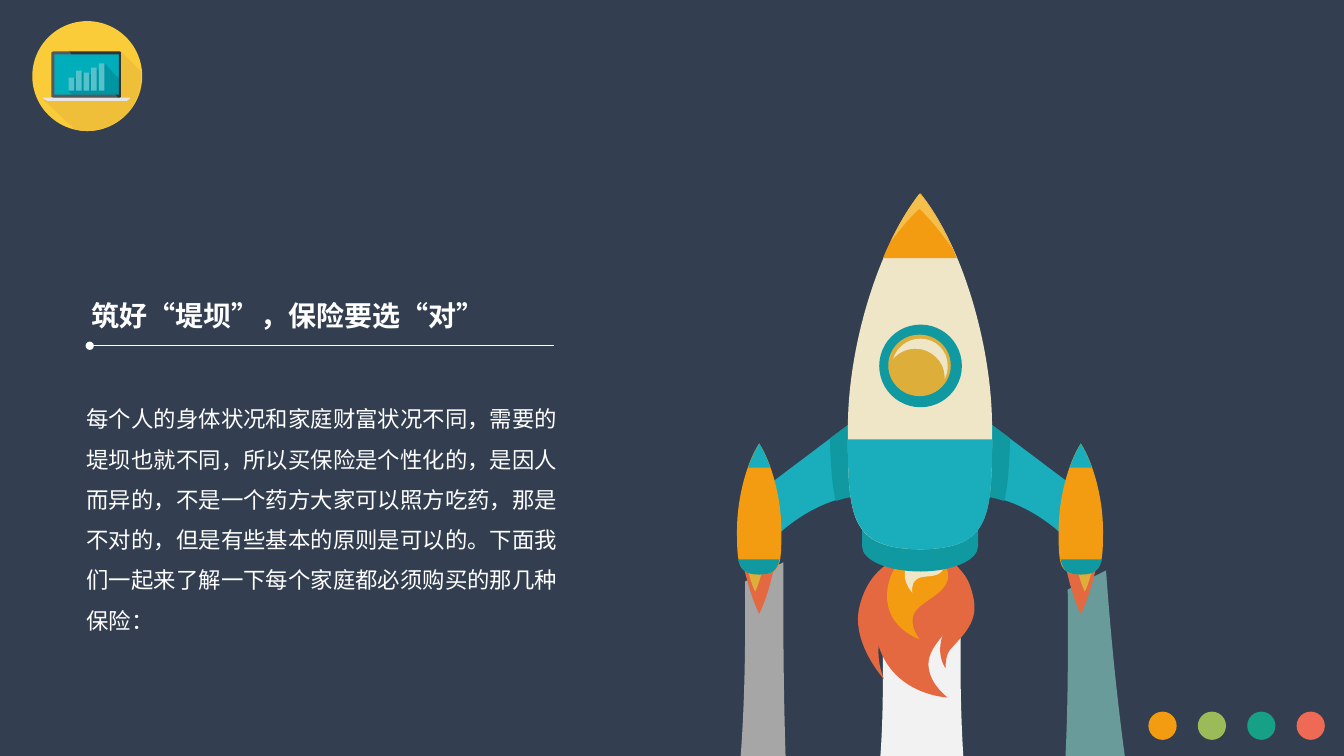
from dataclasses import dataclass

from lxml import etree
from pptx import Presentation
from pptx.dml.color import RGBColor
from pptx.enum.shapes import MSO_CONNECTOR, MSO_SHAPE
from pptx.enum.text import MSO_ANCHOR, MSO_AUTO_SIZE, PP_ALIGN
from pptx.oxml.ns import qn
from pptx.util import Inches, Pt

OVAL, RECT = MSO_SHAPE.OVAL, MSO_SHAPE.RECTANGLE
STRAIGHT = MSO_CONNECTOR.STRAIGHT
LEFT, JUSTIFY = PP_ALIGN.LEFT, PP_ALIGN.JUSTIFY
TOP, NO_FIT = MSO_ANCHOR.TOP, MSO_AUTO_SIZE.NONE
TITLE_ONLY = 5


@dataclass(frozen=True)
class Theme:
    font: str = "Noto Sans CJK SC"
    title_size: int = 20
    body_size: int = 16
    navy: str = "333F50"
    white: str = "FFFFFF"
    teal: str = "1AAEBC"
    dark_teal: str = "1099A1"
    orange: str = "F39C12"
    amber: str = "F4BF4A"
    gold: str = "DDAE3A"
    cream: str = "EFE5C7"
    flame: str = "E46940"
    smoke_gray: str = "A6A6A6"
    smoke_green: str = "699B9A"
    smoke_white: str = "F2F2F2"
    badge: str = "FACC39"
    badge_shade: str = "EFBF3A"
    screen: str = "00ADBB"
    screen_shade: str = "0095A2"
    bar: str = "55C2CB"
    base: str = "E6E6E6"
    frame: str = "58585A"
    frame_dark: str = "333333"
    dots: tuple = ("F39C12", "9BBB59", "16A085", "EF6A54")


@dataclass(frozen=True)
class Box:
    left: float
    top: float
    width: float
    columns: int

    def size(self, n):
        return Inches(n * self.width / self.columns)

    def point(self, x, y):
        return Inches(self.left) + self.size(x), Inches(self.top) + self.size(y)

    def frame(self, x, y, w, h):
        return *self.point(x, y), self.size(w), self.size(h)


THEME = Theme()
TITLE = "筑好“堤坝”，保险要选“对”"
BODY = (
    "每个人的身体状况和家庭财富状况不同，需要的堤坝也就不同，所以买保险是个性化的，"
    "是因人而异的，不是一个药方大家可以照方吃药，那是不对的，但是有些基本的原则是可以的。"
    "下面我们一起来了解一下每个家庭都必须购买的那几种保险："
)

BADGE_SHADOW = "M 110 51 L 90 31 L 23 73 L 23 79 L 13 79 L 44 108 C 48 109 50 110 56 110 C 86 110 110 86 110 55"
BAR_SHADOW = (
    "M 74 43 L 71 53 L 66 48 L 64 58 L 59 53 L 56 55 L 51 51 L 49 61 L 44 57 L 41 68 "
    "L 38 70 L 41 74 L 48 75 L 88 74 L 88 58"
)
LAPTOP_BASE = "M 13 77 L 13 78 L 17 80 L 96 80 L 99 78 L 99 77"
FRAME_RIGHT = "M 89 31 L 38 31 L 41 34 L 88 34 L 88 74 L 84 74 L 87 77 L 89 77 L 90 76 L 90 32"
FRAME_LEFT = "M 24 74 L 24 34 L 41 34 L 38 31 L 23 31 L 21 32 L 21 76 L 23 77 L 87 77 L 84 74"
BAR_HEIGHTS = (13, 20, 18, 23, 27)

MIRROR_AXIS = 312.5
EXHAUST = (
    ("smoke_gray", "M 91 1115 C 118 700 141 736 139 477 L 177 458 C 175 837 205 902 212 1115"),
    ("smoke_green", "M 420 1105 C 447 690 461 744 459 485 L 497 466 C 527 880 594 899 602 1112"),
    ("smoke_white", "M 172 1133 C 246 718 281 778 275 519 L 353 519 C 346 898 449 926 470 1139"),
    ("flame", "M 360 485 C 362 513 324 532 321 556 C 319 577 340 592 340 592 "
              "C 340 592 290 590 273 545 C 261 514 269 472 291 458 C 324 438 359 458 360 485"),
    ("flame", "M 334 463 C 334 463 358 451 366 496 C 370 519 352 533 342 545 C 337 552 338 563 338 563 "
              "C 338 563 329 553 334 533 C 338 520 351 511 345 501 C 340 491 325 479 325 479"),
    ("flame", "M 308 486 C 308 486 274 521 272 537 C 269 558 277 574 277 574 "
              "C 277 574 245 539 252 504 C 265 445 318 449 318 449"),
    ("orange", "M 340 475 C 336 491 311 497 306 510 C 302 522 312 534 312 534 "
               "C 312 534 283 525 280 496 C 278 477 289 453 304 449 C 326 442 343 459 340 475"),
    ("cream", "M 334 467 C 328 474 314 470 309 475 C 303 479 305 488 305 488 "
              "C 305 488 293 476 299 461 C 304 451 315 443 324 444 C 336 447 340 460 334 467"),
    ("dark_teal", "M 313 440 C 281 440 255 428 255 414 L 255 442 C 255 456 281 467 313 467 "
                  "C 344 467 370 456 370 442 L 370 414 C 370 428 344 440 313 440"),
)
BOOSTER = (
    ("teal", "M 480 394 L 375 315 L 361 391 C 361 391 400 387 445 423 C 458 433 466 448 466 448"),
    ("flame", "M 490 451 C 485 474 479 495 472 509 C 465 495 459 474 455 451"),
    ("gold", "M 486 454 C 483 467 480 479 476 487 C 472 479 469 467 466 454"),
    ("orange", "M 472 340 C 485 360 494 396 494 426 C 494 459 493 470 472 470 "
               "C 450 470 450 459 450 426 C 450 396 459 360 472 340"),
    ("teal", "M 461 364 C 464 355 468 347 472 340 C 476 347 480 355 483 364"),
    ("dark_teal", "M 493 455 C 490 466 485 470 472 470 C 459 470 454 466 452 455"),
    ("dark_teal", "M 402 335 L 375 315 L 361 392 C 361 392 375 390 396 397 C 400 381 401 360 402 335"),
)
HULL = (
    ("cream", "M 313 92 C 271 144 241 244 241 324 C 241 413 242 444 313 445 "
              "C 383 444 384 413 384 324 C 384 244 355 144 313 92"),
    ("teal", "M 241 336 C 241 416 246 444 313 445 C 380 444 384 416 384 336"),
    ("orange", "M 349 156 C 339 131 326 109 313 92 C 299 109 286 131 276 156"),
    ("amber", "M 312 107 C 323 118 334 131 344 146 C 335 125 324 106 312 92 "
              "C 302 105 292 121 284 139 C 293 127 302 116 312 107"),
)
WINDOW_GLARE = (
    "M 308 246 C 324 246 337 259 337 274 L 337 276 C 339 272 340 268 340 263 "
    "C 340 248 328 236 313 236 C 300 236 289 245 286 256 C 291 250 299 246 308 246"
)


def paint(sp, color):
    sp.shadow.inherit = False
    sp.fill.solid()
    sp.fill.fore_color.rgb = RGBColor.from_string(color)
    sp.line.fill.background()


def add_preset(shapes, box, kind, frame, color):
    paint(shapes.add_shape(kind, *box.frame(*frame)), color)


def trace(outline):
    tokens = iter(outline.split())
    segments = []
    for command in tokens:
        values = [float(next(tokens)) for _ in range(6 if command == "C" else 2)]
        segments.append(list(zip(values[::2], values[1::2])))
    return segments


def bend(sp, segments):
    course = sp._element.find(".//" + qn("a:path"))
    lines = iter(list(course)[1:-1])
    for segment in segments:
        steps = [next(lines) for _ in segment]
        if len(steps) == 3:
            curve = course.makeelement(qn("a:cubicBezTo"))
            steps[0].addprevious(curve)
            for step in steps:
                curve.append(step[0])
                course.remove(step)


def add_outline(shapes, box, outline, color, mirrored=False):
    segments = trace(outline)
    points = [box.point(2 * MIRROR_AXIS - x if mirrored else x, y) for segment in segments for x, y in segment]
    builder = shapes.build_freeform(*points[0], scale=1.0)
    builder.add_line_segments(points[1:], close=True)
    sp = builder.convert_to_shape()
    bend(sp, segments[1:])
    paint(sp, color)


def write_text(tf, text, size, align, spacing, bold=False):
    tf.text = text
    tf.word_wrap, tf.auto_size, tf.vertical_anchor = True, NO_FIT, TOP
    p = tf.paragraphs[0]
    p.alignment, p.line_spacing = align, spacing
    font = p.runs[0].font
    font.name, font.size, font.bold = THEME.font, Pt(size), bold
    font.color.rgb = RGBColor.from_string(THEME.white)
    etree.SubElement(p.runs[0]._r.get_or_add_rPr(), qn("a:ea"), typeface=THEME.font)


def add_laptop_badge(s, box):
    shapes = s.shapes.add_group_shape().shapes
    add_preset(shapes, box, OVAL, (2, 1, 109, 109), THEME.badge)
    add_outline(shapes, box, BADGE_SHADOW, THEME.badge_shade)
    add_preset(shapes, box, RECT, (23, 33, 66, 43), THEME.screen)
    add_outline(shapes, box, BAR_SHADOW, THEME.screen_shade)
    for i, height in enumerate(BAR_HEIGHTS):
        add_preset(shapes, box, RECT, (38 + 7.5 * i, 70 - height, 5.5, height), THEME.bar)
    add_outline(shapes, box, LAPTOP_BASE, THEME.base)
    add_outline(shapes, box, FRAME_RIGHT, THEME.frame_dark)
    add_outline(shapes, box, FRAME_LEFT, THEME.frame)


def add_dots(s, box):
    for i, color in enumerate(THEME.dots):
        add_preset(s.shapes, box, OVAL, (49 * i, 0, 28, 28), color)


def add_rocket(s, box):
    shapes = s.shapes.add_group_shape().shapes
    for color, outline in EXHAUST:
        add_outline(shapes, box, outline, getattr(THEME, color))
    for mirrored in (False, True):
        for color, outline in BOOSTER:
            add_outline(shapes, box, outline, getattr(THEME, color), mirrored)
    for color, outline in HULL:
        add_outline(shapes, box, outline, getattr(THEME, color))
    add_preset(shapes, box, OVAL, (272, 222, 82, 82), THEME.dark_teal)
    add_preset(shapes, box, OVAL, (281, 232, 62, 61), THEME.gold)
    add_outline(shapes, box, WINDOW_GLARE, THEME.cream)


def add_message(s, box):
    title = s.shapes.title
    title.left, title.top, title.width, title.height = box.frame(5, 0, 431, 44)
    write_text(title.text_frame, TITLE, THEME.title_size, LEFT, 1.0, bold=True)
    rule = s.shapes.add_connector(STRAIGHT, *box.point(13, 52), *box.point(473, 52))
    rule.line.width = Pt(1)
    rule.line.color.rgb = RGBColor.from_string(THEME.white)
    etree.SubElement(rule.line._get_or_add_ln(), qn("a:headEnd"), type="oval")
    etree.SubElement(rule._element.spPr, qn("a:effectLst"))
    body = s.shapes.add_textbox(*box.frame(0, 93, 487, 287))
    write_text(body.text_frame, BODY, THEME.body_size, JUSTIFY, 1.5)


def main():
    prs = Presentation()
    prs.slide_width, prs.slide_height = Inches(13.33), Inches(7.5)
    s = prs.slides.add_slide(prs.slide_layouts[TITLE_ONLY])
    s.background.fill.solid()
    s.background.fill.fore_color.rgb = RGBColor.from_string(THEME.navy)
    add_laptop_badge(s, Box(0.3, 0.2, 1.1, 110))
    add_dots(s, Box(11.39, 7.06, 1.75, 175))
    add_rocket(s, Box(6, 1, 6.33, 633))
    add_message(s, Box(0.76, 2.91, 4.87, 487))
    prs.save("out.pptx")


if __name__ == "__main__":
    main()
